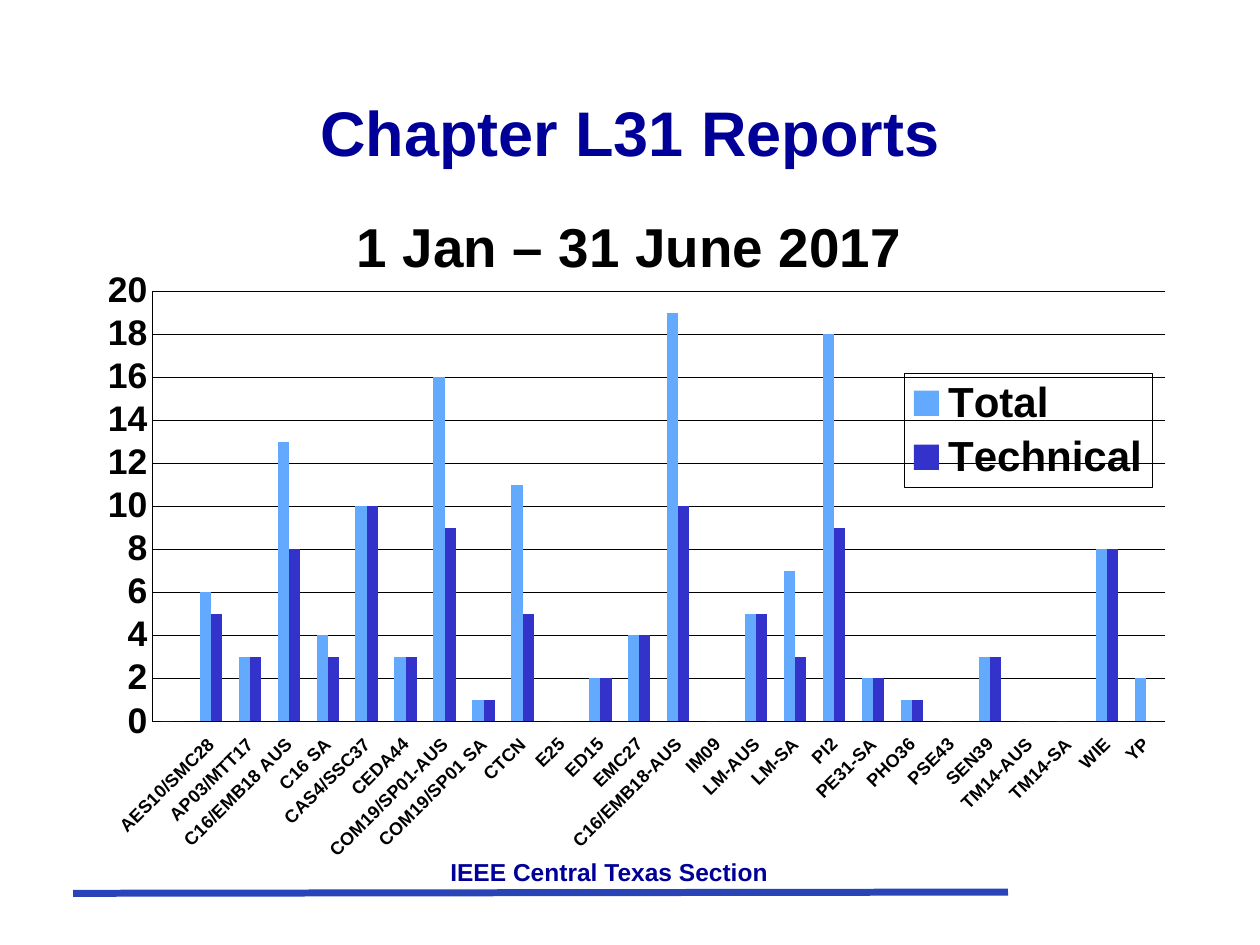
from dataclasses import dataclass

from lxml import etree
from pptx import Presentation
from pptx import util as u
from pptx.chart.data import CategoryChartData
from pptx.dml.color import RGBColor
from pptx.enum import chart as ch
from pptx.enum import shapes, text
from pptx.oxml import parse_xml
from pptx.oxml.ns import nsdecls, qn

COLORS = {"navy": "000099", "rule": "2944B7", "black": "000000",
          "total": "63AAFE", "technical": "3333CC"}
FONT = "Arial"

# chapter, total meetings, technical meetings
REPORTS = [
    ("", 0, 0), ("AES10/SMC28", 6, 5), ("AP03/MTT17", 3, 3),
    ("C16/EMB18 AUS", 13, 8), ("C16 SA", 4, 3), ("CAS4/SSC37", 10, 10),
    ("CEDA44", 3, 3), ("COM19/SP01-AUS", 16, 9), ("COM19/SP01 SA", 1, 1),
    ("CTCN", 11, 5), ("E25", 0, 0), ("ED15", 2, 2), ("EMC27", 4, 4),
    ("C16/EMB18-AUS", 19, 10), ("IM09", 0, 0), ("LM-AUS", 5, 5),
    ("LM-SA", 7, 3), ("PI2", 18, 9), ("PE31-SA", 2, 2), ("PHO36", 1, 1),
    ("PSE43", 0, 0), ("SEN39", 3, 3), ("TM14-AUS", 0, 0), ("TM14-SA", 0, 0),
    ("WIE", 8, 8), ("YP", 2, 0),
]


@dataclass
class Label:
    wording: str
    left: float
    top: float
    width: float
    height: float
    size: float


LABELS = [
    Label("IEEE Central Texas Section", 1.75, 6.75, 6.17, 0.33, 14),
    Label("Chapter L31 Reports", 0.75, 0.42, 8.5, 1.25, 36),
]


def rgb(name: str) -> RGBColor:
    return RGBColor.from_string(COLORS[name])


def style_font(font, size: float, color: str = "black") -> None:
    font.name, font.size, font.bold = FONT, u.Pt(size), True
    font.color.rgb = rgb(color)


def style_line(line, color: str, width: float) -> None:
    line.color.rgb = rgb(color)
    line.width = u.Pt(width)


def add_label(slide, label: Label) -> None:
    box = slide.shapes.add_textbox(u.Inches(label.left), u.Inches(label.top),
                                   u.Inches(label.width), u.Inches(label.height))
    frame = box.text_frame
    frame.word_wrap = True
    frame.vertical_anchor = text.MSO_ANCHOR.MIDDLE
    frame.text = label.wording
    paragraph = frame.paragraphs[0]
    paragraph.alignment = text.PP_ALIGN.CENTER
    style_font(paragraph.runs[0].font, label.size, "navy")


def add_footer_rule(slide) -> None:
    rule = slide.shapes.add_connector(shapes.MSO_CONNECTOR.STRAIGHT, u.Inches(0.58),
                                      u.Inches(7.09), u.Inches(8), u.Inches(7.08))
    style_line(rule.line, "rule", 4)
    etree.SubElement(rule.element.spPr, qn("a:effectLst"))


def chart_part(chart, tag: str):
    """Return the first XML element of the chart with this tag."""
    return chart.element.find(".//" + qn(tag))


def place(part, index: int, inner: bool = False, **fractions: float) -> None:
    """Give a chart part a manual layout, as fractions of the chart's size."""
    for old in part.findall(qn("c:layout")):
        part.remove(old)
    target = '<c:layoutTarget val="inner"/>' if inner else ""
    modes = "".join(f'<c:{key}Mode val="edge"/>' for key in "xy")
    values = "".join(f'<c:{key} val="{value}"/>' for key, value in fractions.items())
    part.insert(index, parse_xml(
        f'<c:layout {nsdecls("c")}><c:manualLayout>{target}{modes}{values}'
        "</c:manualLayout></c:layout>"))


def style_axis(axis, size: float) -> None:
    axis.major_tick_mark = axis.minor_tick_mark = ch.XL_TICK_MARK.NONE
    style_line(axis.format.line, "black", 0.25)
    style_font(axis.tick_labels.font, size)


def style_legend(chart) -> None:
    chart.has_legend = True
    legend = chart.legend
    legend.position = ch.XL_LEGEND_POSITION.RIGHT
    legend.include_in_layout = False
    style_font(legend.font, 24)
    legend_xml = chart_part(chart, "c:legend")
    place(legend_xml, 1, x=0.73, y=0.26, w=0.2, h=0.16)
    border = parse_xml(
        f'<c:spPr {nsdecls("c", "a")}><a:noFill/><a:ln w="3175"><a:solidFill>'
        f'<a:srgbClr val="{COLORS["black"]}"/></a:solidFill></a:ln></c:spPr>')
    legend_xml.find(qn("c:txPr")).addprevious(border)


def add_report_chart(slide) -> None:
    chapters, totals, technicals = zip(*REPORTS)
    data = CategoryChartData()
    data.categories = chapters
    data.add_series("Total", totals)
    data.add_series("Technical", technicals)
    chart = slide.shapes.add_chart(
        ch.XL_CHART_TYPE.COLUMN_CLUSTERED, u.Inches(0), u.Inches(1.48),
        u.Inches(9.83), u.Inches(5.69), data).chart
    style_font(chart.font, 26.1)

    chart.has_title = True
    period = chart.chart_title.text_frame
    period.text = "1 Jan – 31 June 2017"
    style_font(period.paragraphs[0].runs[0].font, 31.3)
    place(chart_part(chart, "c:title"), 1, x=0.28, y=0.02)

    columns = chart.plots[0]
    columns.gap_width, columns.overlap = 150, 0
    columns.vary_by_categories = False
    for series, color in zip(columns.series, ("total", "technical")):
        series.format.fill.solid()
        series.format.fill.fore_color.rgb = rgb(color)
    place(chart_part(chart, "c:plotArea"), 0, inner=True,
          x=0.123, y=0.146, w=0.818, h=0.6)

    chapter_axis, count_axis = chart.category_axis, chart.value_axis
    style_axis(chapter_axis, 10.3)
    chapter_axis.tick_label_position = ch.XL_TICK_LABEL_POSITION.LOW
    slant = chart_part(chart, "c:catAx").find(qn("c:txPr")).find(qn("a:bodyPr"))
    slant.set("rot", str(-45 * 60000))
    slant.set("vert", "horz")
    style_axis(count_axis, 20.3)
    count_axis.minimum_scale, count_axis.maximum_scale = 0, 20
    count_axis.major_unit = 2
    count_axis.has_major_gridlines = True
    style_line(count_axis.major_gridlines.format.line, "black", 0.25)
    style_legend(chart)


def main() -> None:
    deck = Presentation()
    deck.slide_width, deck.slide_height = u.Inches(10), u.Inches(7.5)
    slide = deck.slides.add_slide(deck.slide_layouts[6])
    add_footer_rule(slide)
    for label in LABELS:
        add_label(slide, label)
    add_report_chart(slide)
    deck.save("out.pptx")


if __name__ == "__main__":
    main()
